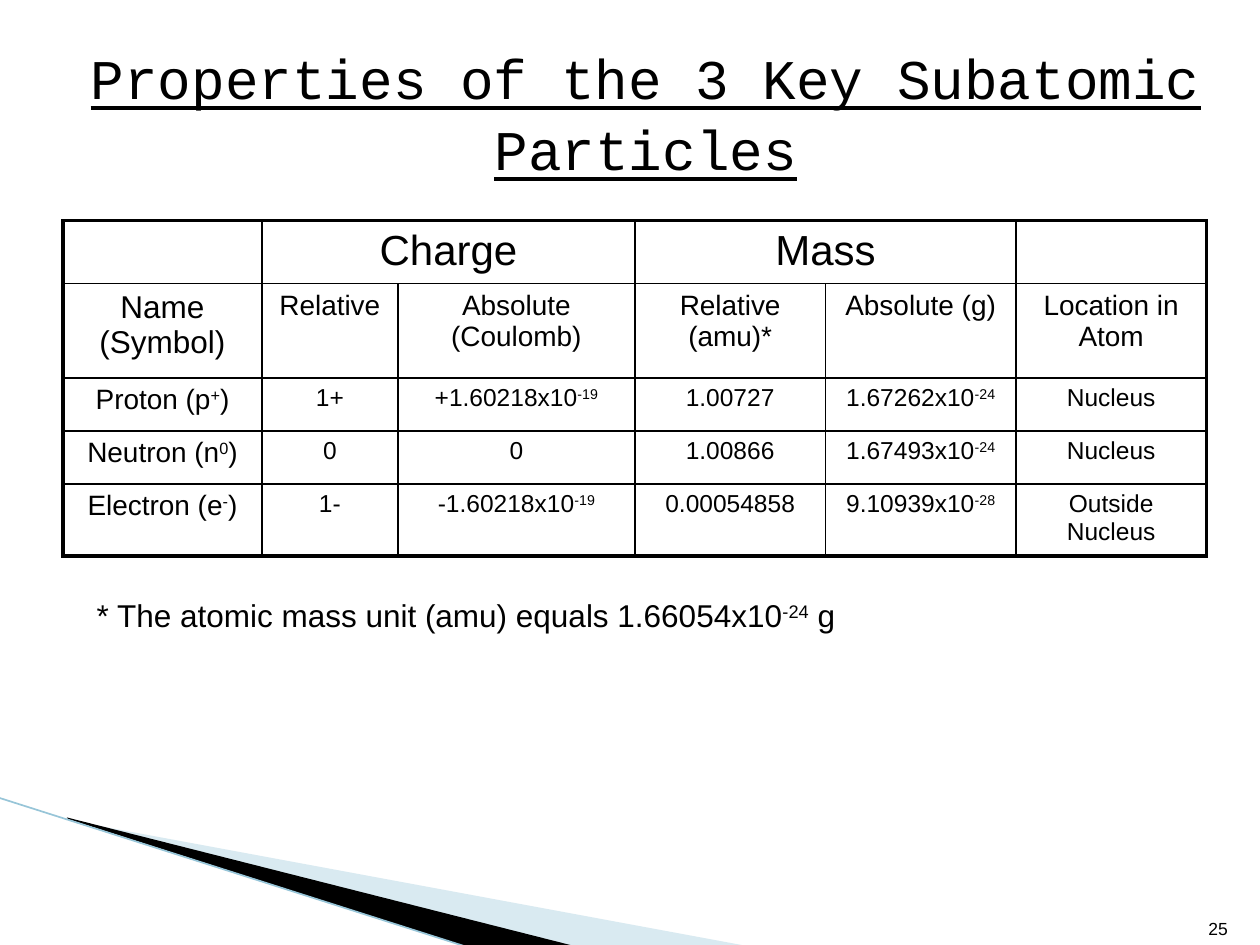
from lxml.etree import SubElement
from pptx import Presentation
from pptx.dml.color import RGBColor
from pptx.enum.shapes import MSO_CONNECTOR
from pptx.enum.text import MSO_ANCHOR as ANCHOR, PP_ALIGN as ALIGN
from pptx.oxml.ns import qn
from pptx.util import Cm, Pt

COLORS = {"text": "000000", "paper": "FFFFFF", "wedge": "A0CBDC", "edge": "97C5D8"}
COLUMNS = [4.01, 2.74, 4.78, 3.84, 3.84, 3.84]
ROW_HEIGHTS = [1.27, 1.9, 1.07, 1.07, 1.45]
ROWS = [
    ["", "Charge", "", "Mass", "", ""],
    ["Name (Symbol)", "Relative", "Absolute (Coulomb)", "Relative (amu)*",
     "Absolute (g)", "Location in Atom"],
    ["Proton (p^+^)", "1+", "+1.60218x10^-19^", "1.00727", "1.67262x10^-24^", "Nucleus"],
    ["Neutron (n^0^)", "0", "0", "1.00866", "1.67493x10^-24^", "Nucleus"],
    ["Electron (e^-^)", "1-", "-1.60218x10^-19^", "0.00054858", "9.10939x10^-28^",
     "Outside Nucleus"],
]
# Sizes of the first column and of the others, row by row
SIZES = [(24, 24), (18, 16), (16, 14), (16, 14), (16, 14)]


def rgb(name):
    return RGBColor.from_string(COLORS[name])


def write(tf, text, size=18, font="Arial", align=ALIGN.LEFT, underline=None):
    """Write one paragraph; text between ^ marks is raised."""
    tf.word_wrap = True
    p = tf.paragraphs[0]
    p.alignment = align
    for i, part in enumerate(text.split("^")):
        if not part:
            continue
        r = p.add_run()
        r.text = part
        r.font.name, r.font.size, r.font.underline = font, Pt(size), underline
        r.font.color.rgb = rgb("text")
        if i % 2:
            r.font._element.set("baseline", "30000")
    return p


def paint(fill, color, alpha=None):
    fill.solid()
    fill.fore_color.rgb = rgb(color)
    if alpha:
        clr = fill._xPr.find(qn("a:solidFill")).find(qn("a:srgbClr"))
        SubElement(clr, qn("a:alpha")).set("val", str(alpha * 1000))


def add_corner(s, left, top):
    def wedge(points, color, alpha=None):
        pts = [(Cm(left + x), Cm(top + y)) for x, y in points]
        builder = s.shapes.build_freeform(*pts[0])
        builder.add_line_segments(pts[1:], close=True)
        sp = builder.convert_to_shape()
        sp.shadow.inherit = False
        sp.line.fill.background()
        paint(sp.fill, color, alpha)

    wedge([(1.4, 0.54), (15.11, 3.08), (11.58, 3.08), (1.4, 0.51)], "wedge", 40)
    wedge([(1.35, 0.48), (11.61, 3.08), (9.45, 3.1), (1.37, 0.51)], "text")
    line = s.shapes.add_connector(MSO_CONNECTOR.STRAIGHT, Cm(left - 0.03), Cm(top + 0.08),
                                  Cm(left + 9.45), Cm(top + 3.1))
    line.line.color.rgb, line.line.width = rgb("edge"), Pt(0.95)
    SubElement(line._element.spPr, qn("a:effectLst"))


def add_title(s, left, top, width, height):
    title = s.shapes.title
    title.left, title.top, title.width, title.height = map(Cm, (left, top, width, height))
    title.text_frame.vertical_anchor = ANCHOR.MIDDLE
    p = write(title.text_frame, "Properties of the 3 Key Subatomic Particles", size=32,
              font="Courier New", align=ALIGN.CENTER, underline=True)
    p.line_spacing = 1.06


def add_borders(cell, outer):
    """Draw all four sides, thicker on those named in outer."""
    tcPr = cell._tc.get_or_add_tcPr()
    for side in "LRTB":
        ln = SubElement(tcPr, qn(f"a:ln{side}"))
        ln.set("w", str(Pt(2.25 if side in outer else 1)))
        SubElement(SubElement(ln, qn("a:solidFill")), qn("a:srgbClr")).set("val", COLORS["text"])


def add_particle_table(s, left, top):
    table = s.shapes.add_table(len(ROWS), len(COLUMNS), Cm(left), Cm(top),
                               Cm(sum(COLUMNS)), Cm(sum(ROW_HEIGHTS))).table
    table.first_row = table.horz_banding = False
    for column, width in zip(table.columns, COLUMNS):
        column.width = Cm(width)
    for row, height in zip(table.rows, ROW_HEIGHTS):
        row.height = Cm(height)
    for c in (1, 3):
        table.cell(0, c).merge(table.cell(0, c + 1))
    last_row, last_col = len(ROWS) - 1, len(COLUMNS) - 1
    for i, texts in enumerate(ROWS):
        for j, text in enumerate(texts):
            cell = table.cell(i, j)
            edges = {"L": j == 0, "R": j == last_col, "T": i == 0, "B": i == last_row}
            add_borders(cell, [side for side, on in edges.items() if on])
            paint(cell.fill, "paper", 50)
            write(cell.text_frame, text, size=SIZES[i][j > 0], align=ALIGN.CENTER)


def add_text(s, left, top, width, height, text, anchor=ANCHOR.TOP, **fmt):
    tf = s.shapes.add_textbox(Cm(left), Cm(top), Cm(width), Cm(height)).text_frame
    tf.vertical_anchor = anchor
    write(tf, text, **fmt)


def main():
    prs = Presentation()
    prs.slide_width, prs.slide_height = Cm(25.4), Cm(19.05)
    s = prs.slides.add_slide(prs.slide_layouts[5])
    add_corner(s, 0, 16)
    add_title(s, 0.64, 0.64, 24.76, 3.18)
    add_particle_table(s, 1.27, 4.45)
    add_text(s, 22.66, 17.81, 2.34, 1.24, "25", anchor=ANCHOR.BOTTOM, size=10,
             align=ALIGN.RIGHT)
    add_text(s, 1.7, 11.89, 16.08, 1.02, "* The atomic mass unit (amu) equals 1.66054x10^-24^ g")
    prs.save("out.pptx")


if __name__ == "__main__":
    main()
